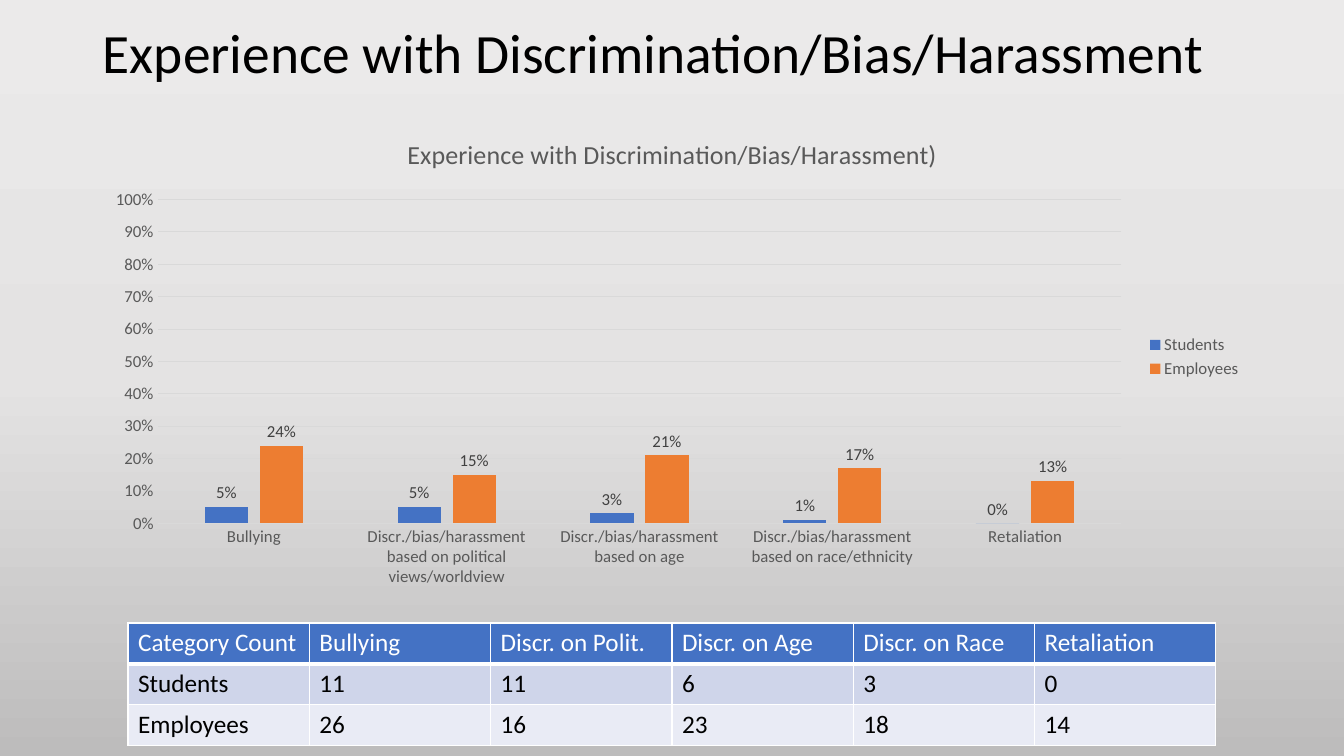
from lxml.etree import SubElement
from pptx import Presentation
from pptx.chart.data import CategoryChartData
from pptx.dml.color import RGBColor
from pptx.enum.chart import XL_CHART_TYPE, XL_LABEL_POSITION, XL_LEGEND_POSITION, XL_TICK_MARK
from pptx.enum.text import MSO_ANCHOR, MSO_AUTO_SIZE, PP_ALIGN
from pptx.oxml.ns import qn
from pptx.util import Inches, Pt

# Content
TITLE = "Experience with Discrimination/Bias/Harassment"
CHART_TITLE = "Experience with Discrimination/Bias/Harassment)"
CATEGORIES = [
    "Bullying",
    "Discr./bias/harassment based on political views/worldview",
    "Discr./bias/harassment based on age",
    "Discr./bias/harassment based on race/ethnicity",
    "Retaliation",
]
SERIES = [
    ("Students", (0.05, 0.05, 0.03, 0.01, 0), "4472C4"),
    ("Employees", (0.24, 0.15, 0.21, 0.17, 0.13), "ED7D31"),
]
COUNTS = [
    ("Category Count", "Bullying", "Discr. on Polit.", "Discr. on Age", "Discr. on Race", "Retaliation"),
    ("Students", "11", "11", "6", "3", "0"),
    ("Employees", "26", "16", "23", "18", "14"),
]
ROW_STYLES = [("4472C4", "FFFFFF"), ("CFD5EA", "000000"), ("E9EBF5", "000000")]
BACKGROUND = [(0, "EBEAEA"), (50, "E4E3E3"), (100, "BDBCBC")]
FONT = "Calibri"
GREY = "595959"
GRID = "D9D9D9"


def rgb(color):
    return RGBColor.from_string(color)


def style(font, size, color):
    font.name, font.size, font.bold = FONT, Pt(size), False
    font.color.rgb = rgb(color)


def add_run(p, text, size, color):
    r = p.add_run()
    r.text = text
    style(r.font, size, color)


def set_border(cell, side, width):
    ln = SubElement(cell._tc.get_or_add_tcPr(), qn(f"a:ln{side}"), w=str(Pt(width)))
    fill = SubElement(ln, qn("a:solidFill"))
    SubElement(fill, qn("a:srgbClr"), val="FFFFFF")


prs = Presentation()
prs.slide_width, prs.slide_height = Inches(13.33), Inches(7.5)
s = prs.slides.add_slide(prs.slide_layouts[5])

# Background gradient, top to bottom
fill = s.background.fill
fill.gradient()
fill.gradient_angle = 270
stops = next(s._element.iter(qn("a:gsLst")))
for stop in list(stops):
    stops.remove(stop)
for position, color in BACKGROUND:
    stop = SubElement(stops, qn("a:gs"), pos=str(position * 1000))
    SubElement(stop, qn("a:srgbClr"), val=color)

# Title
sp = s.shapes.title
sp.left, sp.top, sp.width, sp.height = Inches(0.92), Inches(0.22), Inches(11.5), Inches(0.67)
tf = sp.text_frame
tf.word_wrap = True
tf.auto_size = MSO_AUTO_SIZE.NONE
tf.vertical_anchor = MSO_ANCHOR.MIDDLE
p = tf.paragraphs[0]
p.alignment, p.line_spacing = PP_ALIGN.LEFT, 0.9
add_run(p, TITLE, 39.6, "000000")

# Chart
data = CategoryChartData(number_format="0%")
data.categories = CATEGORIES
for name, values, _ in SERIES:
    data.add_series(name, values)
chart = s.shapes.add_chart(XL_CHART_TYPE.COLUMN_CLUSTERED, Inches(0.92), Inches(1.16),
                           Inches(11.5), Inches(4.76), data).chart
style(chart.font, 10, "000000")
chart.has_title = True
add_run(chart.chart_title.text_frame.paragraphs[0], CHART_TITLE, 18.6, GREY)
chart.chart_title.include_in_layout = False
chart.has_legend = True
chart.legend.position = XL_LEGEND_POSITION.RIGHT
chart.legend.include_in_layout = False
style(chart.legend.font, 12, GREY)

# Columns and their labels
plot = chart.plots[0]
plot.gap_width, plot.overlap, plot.vary_by_categories = 219, -27, False
for series, (_, _, color) in zip(plot.series, SERIES):
    series.format.fill.solid()
    series.format.fill.fore_color.rgb = rgb(color)
    series.invert_if_negative = False
    labels = series.data_labels
    labels.show_value = True
    labels.position = XL_LABEL_POSITION.OUTSIDE_END
    labels.number_format, labels.number_format_is_linked = "0%", False
    style(labels.font, 12, "404040")

# Axes
category_axis, value_axis = chart.category_axis, chart.value_axis
for axis in (category_axis, value_axis):
    axis.major_tick_mark = axis.minor_tick_mark = XL_TICK_MARK.NONE
    style(axis.tick_labels.font, 12, GREY)
value_axis.minimum_scale, value_axis.maximum_scale, value_axis.major_unit = 0, 1, 0.1
value_axis.tick_labels.number_format = "0%"
value_axis.tick_labels.number_format_is_linked = False
value_axis.format.line.fill.background()
for line in (category_axis.format.line, value_axis.major_gridlines.format.line):
    line.color.rgb = rgb(GRID)
    line.width = Pt(0.75)

# Table of counts
table = s.shapes.add_table(len(COUNTS), len(COUNTS[0]), Inches(1.27), Inches(6.18),
                           Inches(10.79), Inches(1.21)).table
for i, (row, (back, ink)) in enumerate(zip(COUNTS, ROW_STYLES)):
    for j, text in enumerate(row):
        cell = table.cell(i, j)
        for side in "LRTB":
            set_border(cell, side, 3 if i == 0 and side == "B" else 1)
        cell.fill.solid()
        cell.fill.fore_color.rgb = rgb(back)
        add_run(cell.text_frame.paragraphs[0], text, 18, ink)

prs.save("out.pptx")
